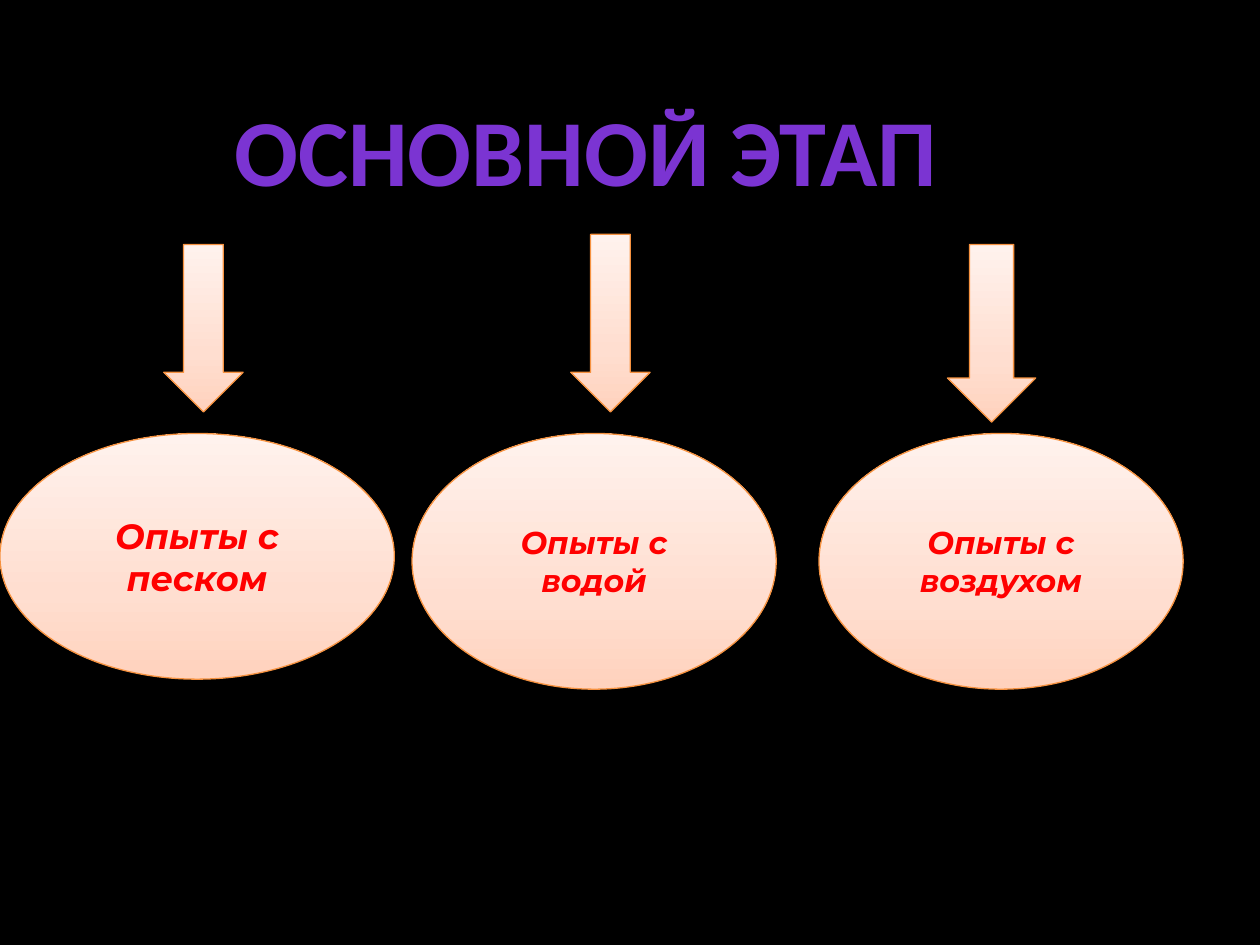
"""Build the slide with three groups of experiments of the main stage."""
from copy import deepcopy
from dataclasses import dataclass

from pptx import Presentation
from pptx.dml.color import RGBColor
from pptx.enum.shapes import MSO_SHAPE as Shape
from pptx.enum.text import MSO_ANCHOR as Anchor, MSO_AUTO_SIZE as AutoSize, PP_ALIGN as Align
from pptx.oxml.ns import qn
from pptx.util import Inches, Pt


@dataclass(frozen=True)
class Theme:
    background: str = "000000"
    outline: str = "F69240"
    outline_width: float = 0.75
    gradient: tuple = ((0, "FFD2BD"), (0.35, "FFDED0"), (1, "FFF2ED"))
    gradient_angle: int = 90
    title_color: str = "7B34D2"
    title_font: str = "Calibri"
    title_size: int = 54
    label_color: str = "FF0000"
    label_font: str = "Montserrat"
    label_size: int = 18
    first_label_size: int = 20


@dataclass(frozen=True)
class Box:
    left: float
    top: float
    width: float
    height: float

    def lengths(self) -> tuple:
        return tuple(Inches(n) for n in (self.left, self.top, self.width, self.height))


@dataclass(frozen=True)
class Experiment:
    label: str
    label_size: int
    arrow: Box
    ellipse: Box


THEME = Theme()
ELLIPSE_TOP = 3.44
EXPERIMENTS = (
    Experiment("Опыты с песком", THEME.first_label_size,
               Box(1.3, 1.94, 0.63, 1.33), Box(0, ELLIPSE_TOP, 3.13, 1.95)),
    Experiment("Опыты с водой", THEME.label_size,
               Box(4.53, 1.86, 0.63, 1.41), Box(3.27, ELLIPSE_TOP, 2.89, 2.03)),
    Experiment("Опыты с воздухом", THEME.label_size,
               Box(7.52, 1.94, 0.7, 1.41), Box(6.5, ELLIPSE_TOP, 2.89, 2.03)),
)


def write_text(shape, text: str, *, font: str, size: int, color: str,
               italic: bool = False, anchor=Anchor.MIDDLE) -> None:
    frame = shape.text_frame
    frame.word_wrap = True
    frame.vertical_anchor = anchor
    paragraph = frame.paragraphs[0]
    paragraph.alignment = Align.CENTER
    run = paragraph.add_run()
    run.text = text
    run.font.name = font
    run.font.size = Pt(size)
    run.font.bold = True
    run.font.italic = italic
    run.font.color.rgb = RGBColor.from_string(color)


def add_gradient_shape(slide, kind: Shape, box: Box):
    shape = slide.shapes.add_shape(kind, *box.lengths())
    shape.shadow.inherit = False
    shape.line.color.rgb = RGBColor.from_string(THEME.outline)
    shape.line.width = Pt(THEME.outline_width)
    shape.fill.gradient()
    shape.fill.gradient_angle = THEME.gradient_angle
    stop_list = shape._element.spPr.find(qn("a:gradFill")).find(qn("a:gsLst"))
    stop_list.append(deepcopy(stop_list[0]))
    for stop, (position, color) in zip(shape.fill.gradient_stops, THEME.gradient):
        stop.position = position
        stop.color.rgb = RGBColor.from_string(color)
    return shape


def add_title(slide, text: str, box: Box) -> None:
    title = slide.shapes.add_textbox(*box.lengths())
    write_text(title, text, font=THEME.title_font, size=THEME.title_size,
               color=THEME.title_color, anchor=Anchor.TOP)
    title.text_frame.auto_size = AutoSize.SHAPE_TO_FIT_TEXT


def main() -> None:
    presentation = Presentation()
    presentation.slide_width, presentation.slide_height = Inches(10), Inches(7.5)
    slide = presentation.slides.add_slide(presentation.slide_layouts[6])
    slide.background.fill.solid()
    slide.background.fill.fore_color.rgb = RGBColor.from_string(THEME.background)

    for experiment in EXPERIMENTS:
        add_gradient_shape(slide, Shape.DOWN_ARROW, experiment.arrow)
    for experiment in EXPERIMENTS:
        ellipse = add_gradient_shape(slide, Shape.OVAL, experiment.ellipse)
        write_text(ellipse, experiment.label, font=THEME.label_font,
                   size=experiment.label_size, color=THEME.label_color, italic=True)
    add_title(slide, "ОСНОВНОЙ ЭТАП", Box(0.83, 0.68, 7.64, 1.01))

    presentation.save("out.pptx")


if __name__ == "__main__":
    main()
